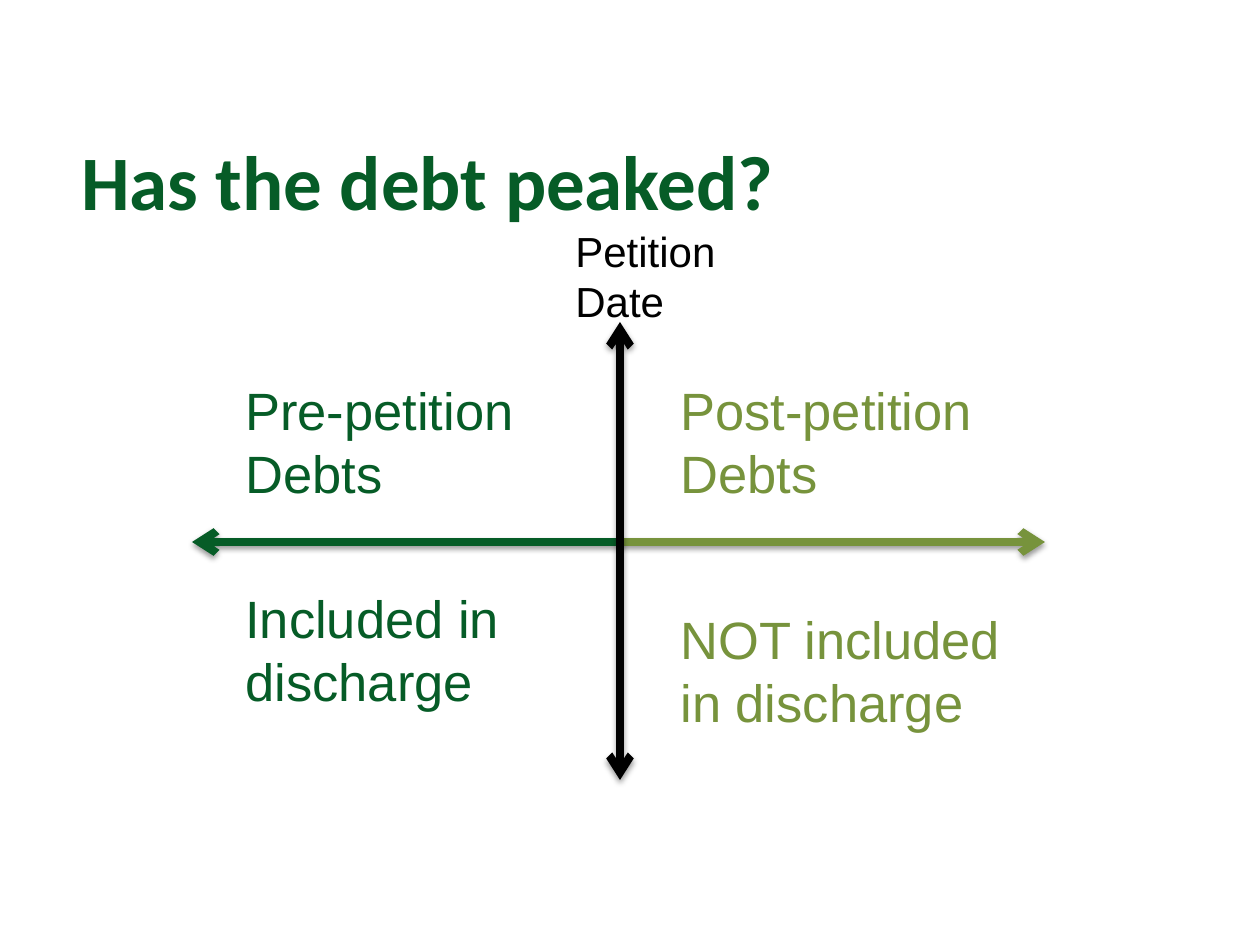
import pptx
import pptx.util
import pptx.dml.color
import pptx.enum.shapes
import pptx.enum.text
import pptx.oxml
import pptx.oxml.ns

RGBColor = pptx.dml.color.RGBColor
GREEN = RGBColor(0x06, 0x5C, 0x27)
OLIVE = RGBColor(0x77, 0x93, 0x3C)
BLACK = RGBColor(0, 0, 0)

EMU_PER_PX = 914400 / 126
PAGE_SIZE = (1260, 945)
CENTER_X, AXIS_Y = 620, 542
LEFT_TEXT, RIGHT_TEXT = 233, 668

TITLE = ("Has the debt peaked?", (69, 87, 1041, 186))
AXES = [
    ((CENTER_X, AXIS_Y), (1045, AXIS_Y), OLIVE, ["tailEnd"]),
    ((CENTER_X, AXIS_Y), (192, AXIS_Y), GREEN, ["tailEnd"]),
    ((CENTER_X, 322), (CENTER_X, 780), BLACK, ["headEnd", "tailEnd"]),
]
LABELS = [
    ("Pre-petition Debts", (LEFT_TEXT, 372, 305, 140), GREEN, 30),
    ("Post-petition Debts", (RIGHT_TEXT, 372, 336, 140), OLIVE, 30),
    ("Included in discharge", (LEFT_TEXT, 580, 352, 140), GREEN, 30),
    ("NOT included in discharge", (RIGHT_TEXT, 601, 377, 140), OLIVE, 30),
    ("Petition Date", (563, 219, 209, 115), BLACK, 24),
]

SHADOW = (
    f'<a:effectLst {pptx.oxml.ns.nsdecls("a")}>'
    '<a:outerShdw blurRad="40000" dist="20000" dir="5400000" rotWithShape="0">'
    '<a:srgbClr val="000000"><a:alpha val="38000"/></a:srgbClr>'
    '</a:outerShdw></a:effectLst>'
)


def px(*lengths):
    return [pptx.util.Emu(round(length * EMU_PER_PX)) for length in lengths]


def add_text(page, text, place, *, color, size, font="Arial", bold=False,
             anchor=pptx.enum.text.MSO_ANCHOR.TOP):
    box = page.shapes.add_textbox(*px(*place))
    frame = box.text_frame
    frame.word_wrap = True
    frame.vertical_anchor = anchor
    span = frame.paragraphs[0].add_run()
    span.text = text
    span.font.name = font
    span.font.size = pptx.util.Pt(size)
    span.font.bold = bold
    span.font.color.rgb = color


def add_axis(page, start, end, color, arrowheads):
    axis = page.shapes.add_connector(
        pptx.enum.shapes.MSO_CONNECTOR.STRAIGHT, *px(*start, *end))
    axis.line.color.rgb = color
    axis.line.width = pptx.util.Pt(4.5)
    outline = axis.line._get_or_add_ln()
    for name in arrowheads:
        outline.append(pptx.oxml.parse_xml(
            f'<a:{name} {pptx.oxml.ns.nsdecls("a")} type="arrow"/>'))
    axis._element.spPr.append(pptx.oxml.parse_xml(SHADOW))


def main():
    deck = pptx.Presentation()
    deck.slide_width, deck.slide_height = px(*PAGE_SIZE)
    page = deck.slides.add_slide(deck.slide_layouts[6])

    add_text(page, *TITLE, color=GREEN, size=44, font="Calibri", bold=True,
             anchor=pptx.enum.text.MSO_ANCHOR.MIDDLE)
    for axis in AXES:
        add_axis(page, *axis)
    for text, place, color, size in LABELS:
        add_text(page, text, place, color=color, size=size)

    deck.save("out.pptx")


if __name__ == "__main__":
    main()
